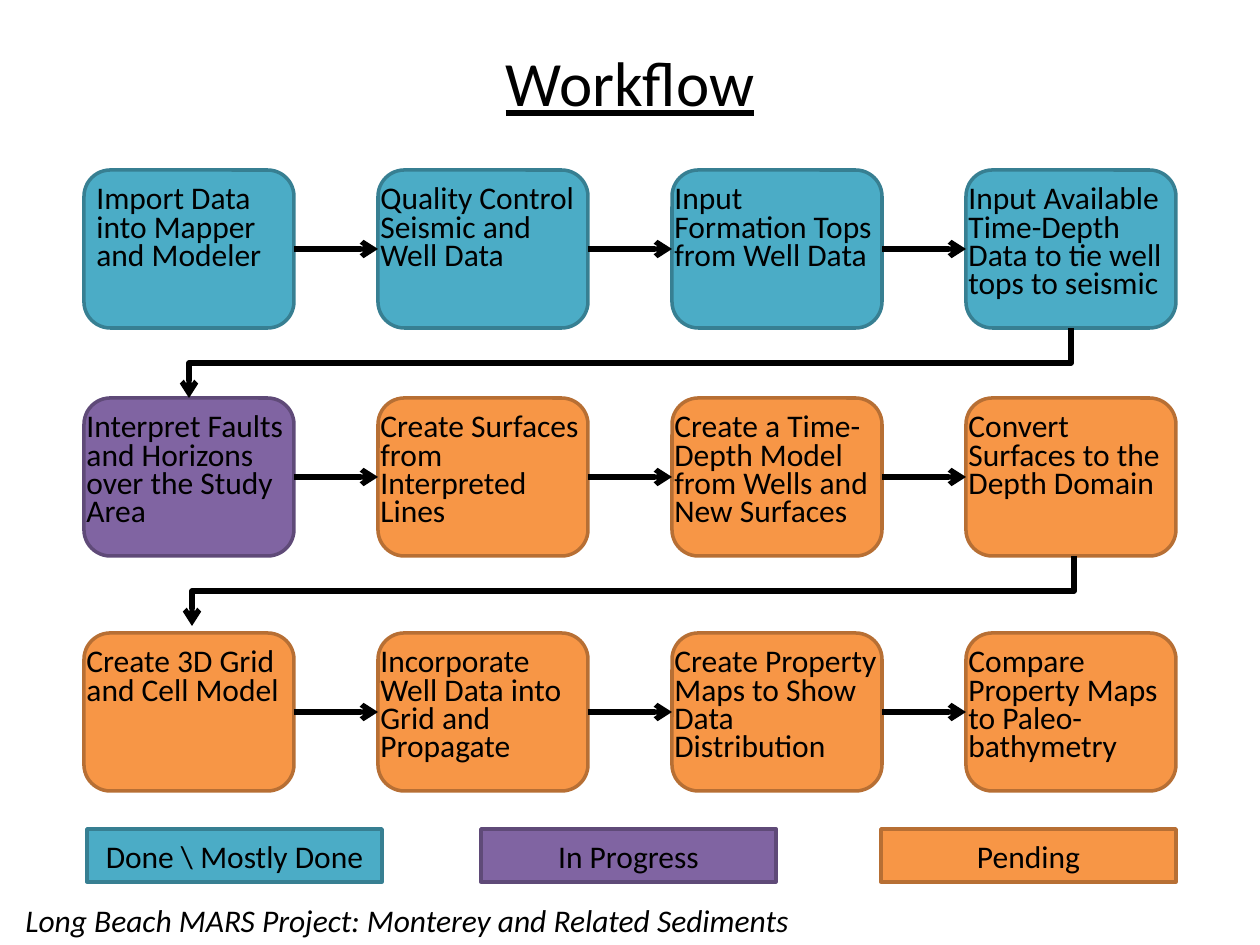
import pptx
import pptx.dml.color
import pptx.enum.shapes
import pptx.enum.text
import pptx.oxml
import pptx.oxml.ns
import pptx.util

EMU_PER_PX = 914400 / 126
FONT = "Calibri"
COLORS = {
    "ink": "000000",
    "done": "4BACC6", "done_edge": "377F92",
    "progress": "8064A2", "progress_edge": "5F4A78",
    "pending": "F79646", "pending_edge": "B76F34",
}
STEP_LEFT, STEP_PITCH, STEP_WIDTH, STEP_HEIGHT = 84, 294, 210, 158
ROWS = [
    (170, [("Import Data into Mapper and Modeler", "done", 3),
           ("Quality Control Seismic and Well Data", "done", 3),
           ("Input Formation Tops from Well Data", "done", 3),
           ("Input Available Time-Depth Data to tie well tops to seismic", "done", 4)]),
    (398, [("Interpret Faults and Horizons over the Study Area", "progress", 4),
           ("Create Surfaces from Interpreted Lines", "pending", 4),
           ("Create a Time-Depth Model from Wells and New Surfaces", "pending", 4),
           ("Convert Surfaces to the Depth Domain", "pending", 3)]),
    (633, [("Create 3D Grid and Cell Model", "pending", 2),
           ("Incorporate Well Data into Grid and Propagate", "pending", 4),
           ("Create Property Maps to Show Data Distribution", "pending", 4),
           ("Compare Property Maps to Paleo-bathymetry", "pending", 4)]),
]
LEGEND = [(87, "Done \\ Mostly Done", "done"),
          (481, "In Progress", "progress"),
          (881, "Pending", "pending")]


def px(*lengths):
    """Turn pixel lengths into EMU."""
    return [pptx.util.Emu(round(length * EMU_PER_PX)) for length in lengths]


def color(name):
    """Look up a palette colour."""
    return pptx.dml.color.RGBColor.from_string(COLORS[name])


def write(shape, text, size=18, centred=False, middle=False,
          italic=None, underline=None, spacing=None):
    """Put one formatted paragraph into a shape."""
    frame = shape.text_frame
    frame.word_wrap = True
    frame.text = text
    if middle:
        frame.vertical_anchor = pptx.enum.text.MSO_ANCHOR.MIDDLE
    paragraph = frame.paragraphs[0]
    paragraph.line_spacing = spacing
    if centred:
        paragraph.alignment = pptx.enum.text.PP_ALIGN.CENTER
    for run in paragraph.runs:
        run.font.name = FONT
        run.font.size = pptx.util.Pt(size)
        run.font.italic = italic
        run.font.underline = underline
        run.font.color.rgb = color("ink")


def add_label(slide, box, text, **style):
    """Add a wrapping text box."""
    label = slide.shapes.add_textbox(*px(*box))
    write(label, text, **style)
    return label


def add_box(slide, preset, box, status):
    """Add a box in the colours of its status."""
    shape = slide.shapes.add_shape(preset, *px(*box))
    shape.shadow.inherit = False
    shape.fill.solid()
    shape.fill.fore_color.rgb = color(status)
    shape.line.color.rgb = color(status + "_edge")
    shape.line.width = pptx.util.Pt(2)
    return shape


def add_step(slide, left, top, text, status, lines, inset):
    """Add a workflow step with its label."""
    step = add_box(slide, pptx.enum.shapes.MSO_SHAPE.ROUNDED_RECTANGLE,
                   (left, top, STEP_WIDTH, STEP_HEIGHT), status)
    label = add_label(slide, (left - 10 + inset, top + 11, STEP_WIDTH + 20 - 2 * inset, 14 + 28 * lines),
                      text, spacing=0.75)
    label.text_frame.auto_size = pptx.enum.text.MSO_AUTO_SIZE.SHAPE_TO_FIT_TEXT
    return step


def add_arrow(slide, kind, *ends):
    """Add a connector with an open arrowhead."""
    arrow = slide.shapes.add_connector(kind, *px(*ends))
    arrow.line.color.rgb = color("ink")
    arrow.line.width = pptx.util.Pt(3)
    head = pptx.oxml.parse_xml(
        '<a:tailEnd %s type="arrow"/>' % pptx.oxml.ns.nsdecls("a"))
    arrow.line._get_or_add_ln().append(head)
    arrow._element.spPr.append(pptx.oxml.parse_xml(
        "<a:effectLst %s/>" % pptx.oxml.ns.nsdecls("a")))
    return arrow


def link_steps(slide, source, target):
    """Join two neighbouring steps by a straight arrow."""
    arrow = add_arrow(slide, pptx.enum.shapes.MSO_CONNECTOR.STRAIGHT, 0, 0, 0, 0)
    arrow.begin_connect(source, 3)
    arrow.end_connect(target, 1)


def add_row_return(slide, start_x, start_y, run, drop):
    """Add an elbow arrow going down, back left and down again."""
    centre_x, centre_y = start_x - run / 2, start_y + drop / 2
    arrow = add_arrow(slide, pptx.enum.shapes.MSO_CONNECTOR.ELBOW,
                      centre_x - drop / 2, centre_y - run / 2,
                      centre_x + drop / 2, centre_y + run / 2)
    arrow._element.spPr.find(pptx.oxml.ns.qn("a:xfrm")).set("rot", "5400000")


def main():
    """Build the workflow slide."""
    deck = pptx.Presentation()
    deck.slide_width, deck.slide_height = px(1260, 945)
    slide = deck.slides.add_slide(deck.slide_layouts[6])
    add_label(slide, (13, 895, 1247, 50),
              "Long Beach MARS Project: Monterey and Related Sediments", italic=True)
    add_label(slide, (63, 3, 1134, 157), "Workflow", size=36,
              centred=True, middle=True, underline=True)

    step_rows = []
    for top, entries in ROWS:
        step_rows.append([
            add_step(slide, STEP_LEFT + STEP_PITCH * column, top, *entry,
                     inset=10 if (top, column) == (ROWS[0][0], 0) else 0)
            for column, entry in enumerate(entries)])
    for steps in step_rows:
        for source, target in zip(steps, steps[1:]):
            link_steps(slide, source, target)
    for start_x, (top, _) in zip((1071, 1074), ROWS):
        add_row_return(slide, start_x, top + STEP_HEIGHT, 3 * STEP_PITCH, 70)

    for left, text, status in LEGEND:
        key = add_box(slide, pptx.enum.shapes.MSO_SHAPE.RECTANGLE,
                      (left, 829, 295, 53), status)
        write(key, text, centred=True, middle=True)
    deck.save("out.pptx")


if __name__ == "__main__":
    main()
